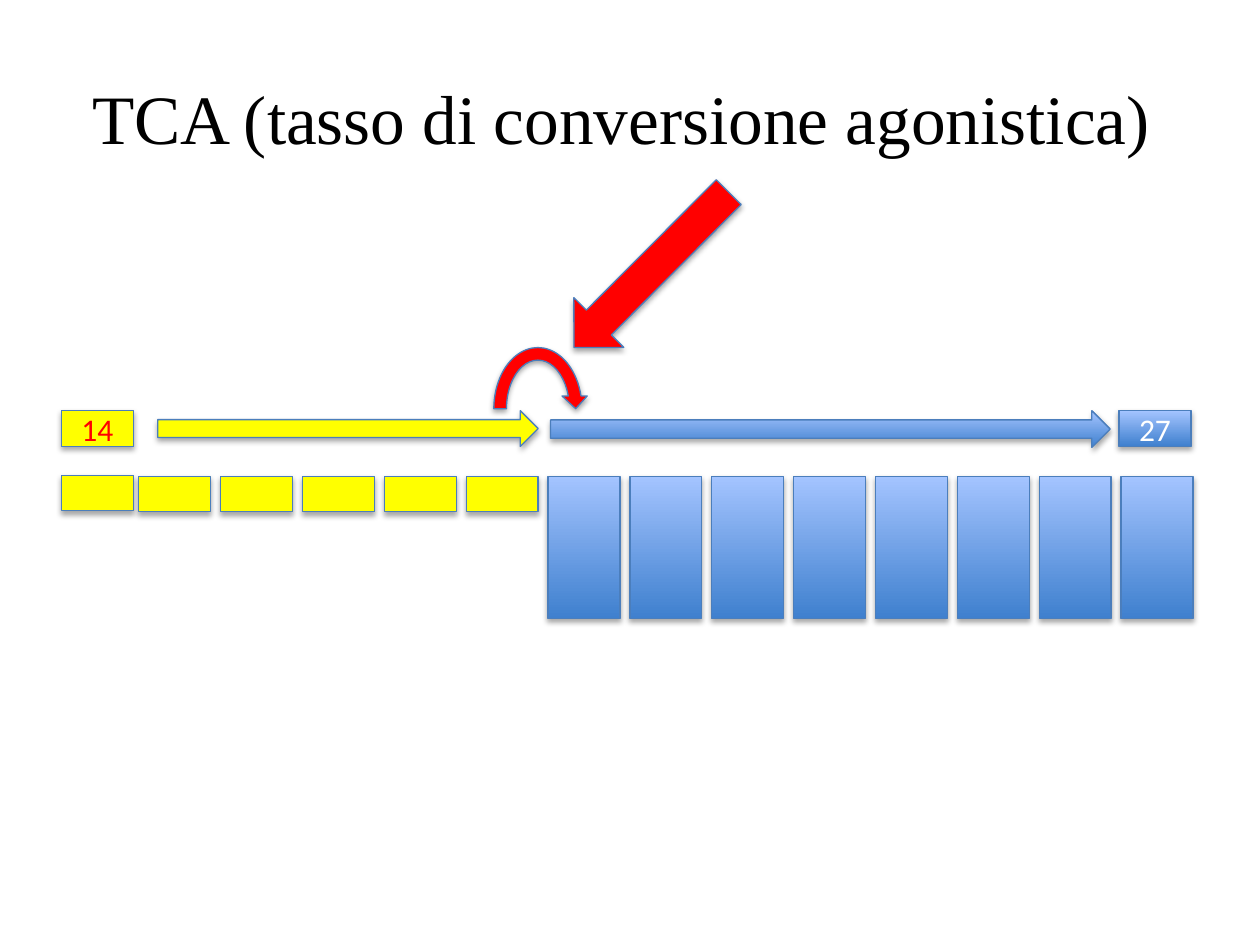
from lxml import etree
from pptx import Presentation
from pptx.dml.color import RGBColor
from pptx.enum.shapes import MSO_SHAPE
from pptx.enum.text import MSO_ANCHOR, PP_ALIGN
from pptx.util import Cm, Pt

RECTANGLE = MSO_SHAPE.RECTANGLE
RIGHT_ARROW = MSO_SHAPE.RIGHT_ARROW
DOWN_ARROW = MSO_SHAPE.DOWN_ARROW
CIRCULAR_ARROW = MSO_SHAPE.CIRCULAR_ARROW
MIDDLE = MSO_ANCHOR.MIDDLE
CENTER = PP_ALIGN.CENTER

YELLOW, RED, WHITE, BLACK = "FFFF00", "FF0000", "FFFFFF", "000000"
OUTLINE = "4B7EBC"
BLUE_GRADIENT = ("3F80CE", "A4C4FF")  # bottom, top

SHADOW = """<a:effectLst xmlns:a="http://schemas.openxmlformats.org/drawingml/2006/main">
<a:outerShdw blurRad="40000" dist="23000" dir="5400000" rotWithShape="0">
<a:srgbClr val="000000"><a:alpha val="35000"/></a:srgbClr></a:outerShdw></a:effectLst>"""


def add_figure(shapes, kind, left, top, width, height, fill):
    """Add an outlined, shadowed shape; a pair of colours gives a gradient."""
    shape = shapes.add_shape(kind, Cm(left), Cm(top), Cm(width), Cm(height))
    if isinstance(fill, tuple):
        shape.fill.gradient()
        shape.fill.gradient_angle = 90
        for stop, color, position in zip(shape.fill.gradient_stops, fill, (0, 1)):
            stop.color.rgb = RGBColor.from_string(color)
            stop.position = position
    else:
        shape.fill.solid()
        shape.fill.fore_color.rgb = RGBColor.from_string(fill)
    shape.line.color.rgb = RGBColor.from_string(OUTLINE)
    shape.line.width = Pt(0.75)
    shape._element.spPr.append(etree.fromstring(SHADOW))
    return shape


def write_text(shape, text, font_name, size, color):
    """Write one centred line of text."""
    text_frame = shape.text_frame
    text_frame.text = text
    text_frame.word_wrap = True
    text_frame.vertical_anchor = MIDDLE
    paragraph = text_frame.paragraphs[0]
    paragraph.alignment = CENTER
    font = paragraph.runs[0].font
    font.name = font_name
    font.size = Pt(size)
    font.color.rgb = RGBColor.from_string(color)


presentation = Presentation()
presentation.slide_width = Cm(25.4)
presentation.slide_height = Cm(19.05)
slide = presentation.slides.add_slide(presentation.slide_layouts[6])

# Title
title = slide.shapes.add_textbox(Cm(1.27), Cm(0.76), Cm(22.86), Cm(3.18))
write_text(title, "TCA (tasso di conversione agonistica) ", "Times New Roman", 39.6, BLACK)

# Age timeline: start box and first yellow cell
timeline = slide.shapes.add_group_shape().shapes
cell_width, cell_height = 1.45, 0.72
start_box = add_figure(timeline, RECTANGLE, 1.24, 8.28, cell_width, cell_height, YELLOW)
write_text(start_box, "14", "Calibri", 18, RED)
add_figure(timeline, RECTANGLE, 1.24, 9.58, cell_width, cell_height, YELLOW)

# Evenly spaced years: five low yellow cells, then eight tall blue ones
yellow_count, blue_count = 5, 8
for index in range(yellow_count + blue_count):
    if index < yellow_count:
        height, fill = cell_height, YELLOW
    else:
        height, fill = 2.87, BLUE_GRADIENT
    add_figure(timeline, RECTANGLE, 2.8 + 1.65 * index, 9.6, cell_width, height, fill)

# End box and the two phase arrows
end_box = add_figure(timeline, RECTANGLE, 22.56, 8.28, cell_width, cell_height, BLUE_GRADIENT)
write_text(end_box, "27", "Calibri", 18, WHITE)
add_figure(timeline, RIGHT_ARROW, 3.18, 8.28, 7.67, cell_height, YELLOW)
add_figure(timeline, RIGHT_ARROW, 11.1, 8.28, 11.28, 0.74, BLUE_GRADIENT)

# Red arrows marking the conversion
pointer = add_figure(slide.shapes, DOWN_ARROW, 12.42, 3.23, 1.42, 4.42, RED)
pointer.rotation = 44.9
add_figure(slide.shapes, CIRCULAR_ARROW, 9.83, 6.88, 2.03, 2.72, RED)

presentation.save("out.pptx")
